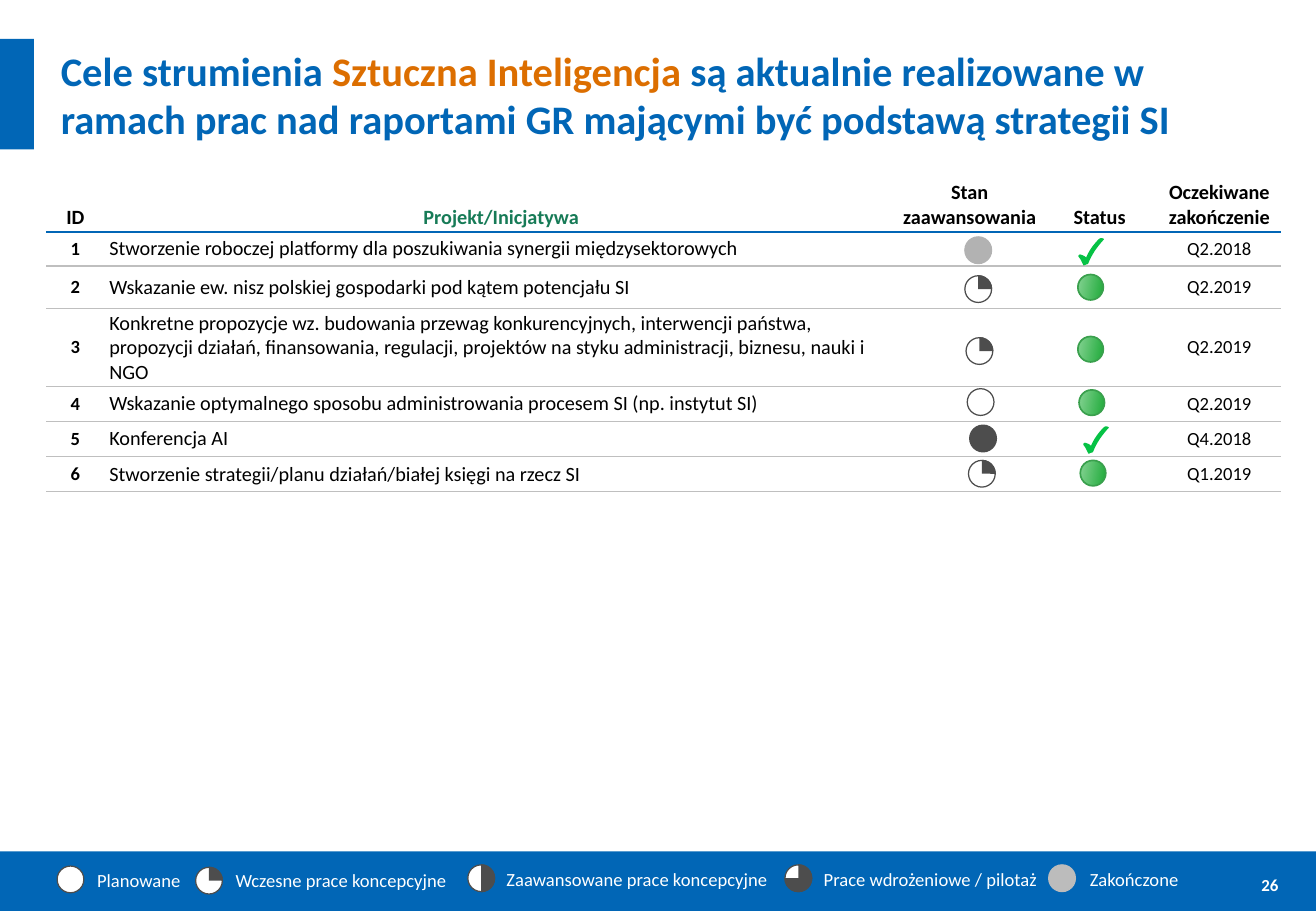
from lxml import etree
from pptx import Presentation
from pptx.dml.color import RGBColor
from pptx.enum.shapes import MSO_SHAPE as Shape
from pptx.enum.text import MSO_ANCHOR as Anchor, PP_ALIGN as Align
from pptx.oxml.ns import qn
from pptx.util import Inches, Pt

# Colours
BLUE = RGBColor(0x01, 0x66, 0xB6)
ORANGE = RGBColor(0xDC, 0x6E, 0x00)
TEAL = RGBColor(0x17, 0x7B, 0x57)
BLACK = RGBColor(0, 0, 0)
WHITE = RGBColor(0xFF, 0xFF, 0xFF)
DARK = RGBColor(0x4D, 0x4D, 0x4D)
GREY = RGBColor(0xB2, 0xB2, 0xB2)
LEGEND_GREY = RGBColor(0xBC, 0xBC, 0xBC)
RULE = RGBColor(0xBF, 0xBF, 0xBF)
CHECK = RGBColor(0x06, 0xC2, 0x45)
GREEN_DARK = RGBColor(0x24, 0xAC, 0x3E)
GREEN_LIGHT = RGBColor(0x85, 0xD3, 0x93)
GREEN_LINE = RGBColor(0x3A, 0xA0, 0x4D)

# Content
TITLE = [
    ("Cele strumienia ", BLUE),
    ("Sztuczna Inteligencja ", ORANGE),
    ("są aktualnie realizowane w ramach prac nad raportami GR "
     "mającymi być podstawą strategii SI", BLUE),
]
PAGE_NUMBER = "26"
HEADERS = ["ID", "Projekt/Inicjatywa", "Stan\nzaawansowania", "Status",
           "Oczekiwane zakończenie"]
# project, due date, row height, progress (fill, quarters, x, y), status (kind, x, y)
PROJECTS = [
    ("Stworzenie roboczej platformy dla poszukiwania synergii międzysektorowych",
     "Q2.2018", 0.28, (GREY, 0, 7.94, 1.95), ("done", 8.88, 1.96)),
    ("Wskazanie ew. nisz polskiej gospodarki pod kątem potencjału SI",
     "Q2.2019", 0.35, (WHITE, 1, 7.94, 2.27), ("on track", 8.87, 2.26)),
    ("Konkretne propozycje wz. budowania przewag konkurencyjnych, interwencji "
     "państwa, propozycji działań, finansowania, regulacji, projektów na styku "
     "administracji, biznesu, nauki i NGO",
     "Q2.2019", 0.64, (WHITE, 1, 7.95, 2.78), ("on track", 8.87, 2.77)),
    ("Wskazanie optymalnego sposobu administrowania procesem SI (np. instytut SI)",
     "Q2.2019", 0.29, (WHITE, 0, 7.96, 3.2), ("on track", 8.88, 3.21)),
    ("Konferencja AI",
     "Q4.2018", 0.29, (DARK, 0, 7.98, 3.5), ("done", 8.92, 3.51)),
    ("Stworzenie strategii/planu działań/białej księgi na rzecz SI",
     "Q1.2019", 0.29, (WHITE, 1, 7.97, 3.79), ("on track", 8.89, 3.79)),
]
# label, label x, label width, label y, progress (fill, quarters, x, y)
LEGEND = [
    ("Planowane", 0.7, 0.89, 7.1, (WHITE, 0, 0.47, 7.13)),
    ("Wczesne prace koncepcyjne", 1.84, 1.96, 7.1, (WHITE, 1, 1.61, 7.14)),
    ("Zaawansowane prace koncepcyjne", 4.07, 2.37, 7.09, (WHITE, 2, 3.85, 7.12)),
    ("Prace wdrożeniowe / pilotaż", 6.68, 1.98, 7.09, (WHITE, 3, 6.46, 7.12)),
    ("Zakończone", 8.87, 0.94, 7.09, (LEGEND_GREY, 0, 8.63, 7.12)),
]
COLUMN_WIDTHS = [0.48, 6.53, 1.18, 0.96, 1.01]
HEADER_HEIGHT = 0.7
DISC, STATUS_DISC = 0.22, 0.21
# Check mark outline: start point, then cubic curves
CHECK_START = (0, 0.15)
CHECK_CURVES = [
    ((0.02, 0.17), (0.03, 0.2), (0.04, 0.22)),
    ((0.06, 0.21), (0.07, 0.21), (0.07, 0.21)),
    ((0.11, 0.1), (0.2, 0.01), (0.2, 0.01)),
    ((0.18, 0), (0.17, 0.01), (0.17, 0.01)),
    ((0.17, 0.01), (0.1, 0.07), (0.06, 0.17)),
    ((0.05, 0.15), (0.01, 0.14), (0.01, 0.14)),
    ((0.01, 0.14), (0, 0.14), (0, 0.15)),
]

deck = Presentation()
deck.slide_width, deck.slide_height = Inches(10.83), Inches(7.5)
page = deck.slides.add_slide(deck.slide_layouts[5])


def style_run(run, size, color, bold=False):
    run.font.name = "Calibri"
    run.font.size = Pt(size)
    run.font.bold = bold
    run.font.color.rgb = color


def paint(shape, fill, line=None, width=0.75):
    shape.shadow.inherit = False
    shape.fill.solid()
    shape.fill.fore_color.rgb = fill
    if line is None:
        shape.line.fill.background()
    else:
        shape.line.color.rgb = line
        shape.line.width = Pt(width)


def add_shape(kind, x, y, width, height):
    return page.shapes.add_shape(kind, Inches(x), Inches(y), Inches(width), Inches(height))


def add_label(text, x, y, width, height, size, bold=False):
    box = page.shapes.add_textbox(Inches(x), Inches(y), Inches(width), Inches(height))
    frame = box.text_frame
    frame.text = text
    frame.vertical_anchor = Anchor.MIDDLE
    style_run(frame.paragraphs[0].runs[0], size, WHITE, bold)
    return frame


def add_progress(fill, quarters, x, y):
    paint(add_shape(Shape.OVAL, x, y, DISC, DISC), fill, DARK if fill == WHITE else fill)
    if quarters:
        wedge = add_shape(Shape.ARC, x, y, DISC, DISC)
        wedge.adjustments[0] = 162
        wedge.adjustments[1] = (quarters - 1) * 54
        paint(wedge, DARK, DARK)


def add_check(x, y, steps=8):
    start, points = CHECK_START, []
    for first, second, end in CHECK_CURVES:
        for step in range(1, steps + 1):
            t = step / steps
            weights = ((1 - t) ** 3, 3 * t * (1 - t) ** 2, 3 * t * t * (1 - t), t ** 3)
            controls = zip(start, first, second, end)
            points.append([sum(w * c for w, c in zip(weights, axis)) for axis in controls])
        start = end
    builder = page.shapes.build_freeform(*[Inches(c) for c in CHECK_START])
    builder.add_line_segments([(Inches(a), Inches(b)) for a, b in points], close=True)
    paint(builder.convert_to_shape(Inches(x), Inches(y)), CHECK, CHECK)


def add_status(kind, x, y):
    if kind == "done":
        add_check(x, y)
        return
    disc = add_shape(Shape.OVAL, x, y, STATUS_DISC, STATUS_DISC)
    paint(disc, GREEN_DARK, GREEN_LINE, 1)
    disc.fill.gradient()
    disc.fill.gradient_angle = 170
    for stop, place, color in zip(disc.fill.gradient_stops, (0.04, 1), (GREEN_DARK, GREEN_LIGHT)):
        stop.position = place
        stop.color.rgb = color


def set_borders(cell, top, bottom):
    properties = cell._tc.get_or_add_tcPr()
    for side, border in (("L", None), ("R", None), ("T", top), ("B", bottom)):
        line = etree.SubElement(properties, qn(f"a:ln{side}"))
        if border is None:
            etree.SubElement(line, qn("a:noFill"))
        else:
            color, width = border
            line.set("w", str(Pt(width)))
            solid = etree.SubElement(line, qn("a:solidFill"))
            etree.SubElement(solid, qn("a:srgbClr")).set("val", str(color))
    cell.fill.background()


def fill_cell(cell, text, size, bold, color, align, anchor, inset):
    cell.margin_left = cell.margin_right = Inches(inset)
    cell.margin_top = cell.margin_bottom = Inches(min(inset, 0.02))
    cell.vertical_anchor = anchor
    cell.text_frame.text = text
    for para in cell.text_frame.paragraphs:
        para.alignment = align
        for run in para.runs:
            style_run(run, size, color, bold)
        if not text:
            etree.SubElement(para._p, qn("a:endParaRPr")).set("sz", "1100")


# Bars and page number
paint(add_shape(Shape.RECTANGLE, 0, 7.01, 10.83, 0.49), BLUE)
paint(add_shape(Shape.RECTANGLE, 0, 0.32, 0.28, 0.91), BLUE)
number = add_label(PAGE_NUMBER, 10.38, 7.19, 0.3, 0.19, 10, True)
number.margin_left = number.margin_right = number.margin_top = number.margin_bottom = 0
number.word_wrap = True

# Title
title = page.shapes.title
title.left, title.top = Inches(0.5), Inches(0.32)
title.width, title.height = Inches(9.49), Inches(0.91)
title.text_frame.margin_left = title.text_frame.margin_right = 0
title.text_frame.vertical_anchor = Anchor.MIDDLE
heading = title.text_frame.paragraphs[0]
heading.alignment = Align.LEFT
for text, color in TITLE:
    span = heading.add_run()
    span.text = text
    style_run(span, 24, color, True)

# Project table
heights = [HEADER_HEIGHT] + [project[2] for project in PROJECTS]
table = page.shapes.add_table(len(heights), len(HEADERS), Inches(0.38), Inches(1.21),
                              Inches(sum(COLUMN_WIDTHS)), Inches(sum(heights))).table
table.first_row = table.horz_banding = False
for column, width in zip(table.columns, COLUMN_WIDTHS):
    column.width = Inches(width)
for row, height in zip(table.rows, heights):
    row.height = Inches(height)
header_rule, row_rule = (BLUE, 1.5), (RULE, 0.75)
for index, text in enumerate(HEADERS):
    cell = table.cell(0, index)
    fill_cell(cell, text, 12, True, TEAL if index == 1 else BLACK,
              Align.CENTER, Anchor.BOTTOM, 0.03)
    set_borders(cell, None, header_rule)
for number, (name, due, _, progress, status) in enumerate(PROJECTS, 1):
    for index, text in enumerate((str(number), name, "", "", due)):
        cell = table.cell(number, index)
        is_name = index == 1
        fill_cell(cell, text, 12 if is_name else 11, index == 0, BLACK,
                  Align.LEFT if is_name else Align.CENTER, Anchor.MIDDLE,
                  (0.02, 0.04, 0.01, 0.01, 0.01)[index])
        set_borders(cell, header_rule if number == 1 else row_rule, row_rule)
    add_progress(*progress)
    add_status(*status)

# Legend
for text, x, width, y, progress in LEGEND:
    add_label(text, x, y, width, 0.29, 11).word_wrap = False
    add_progress(*progress)

deck.save("out.pptx")
